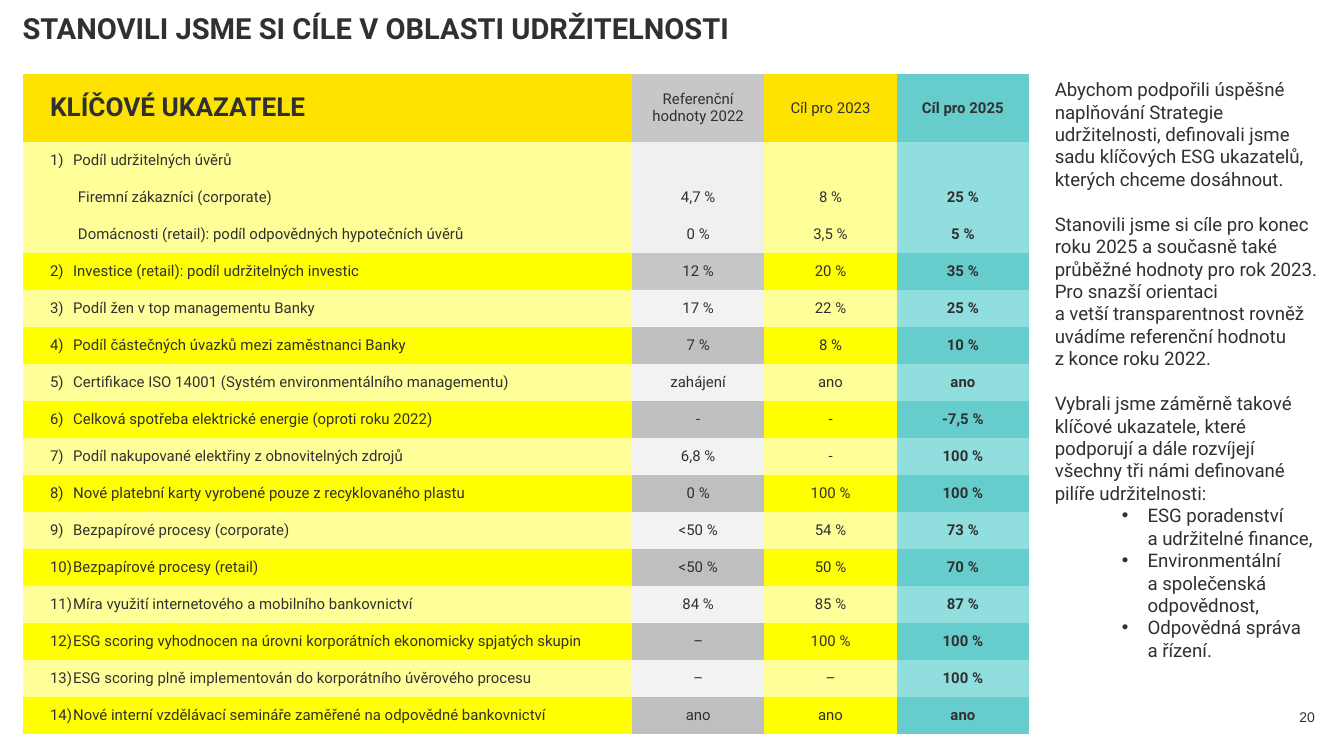
from dataclasses import dataclass

import pptx
import pptx.dml.color
import pptx.enum.text
import pptx.oxml.ns
import pptx.oxml.xmlchemy
import pptx.util
from lxml import etree

Pt = pptx.util.Pt
ALIGN = pptx.enum.text.PP_ALIGN
MIDDLE = pptx.enum.text.MSO_ANCHOR.MIDDLE
qn = pptx.oxml.ns.qn

INK = "303030"
NO_GRID = "{2D5ABB26-0587-4C30-8999-92F81FD0307C}"
HEAD_H, ROW_H = 36.4, 19.83
COLS = (326.25, 70.9, 70.9, 70.9)
TAB, INSET = 12.4, 14.4


@dataclass
class Goal:
    label: str
    base: str
    mid: str
    end: str
    fills: tuple
    indent: float = 0


@dataclass
class Para:
    text: str
    gap: float = 0
    bullet: bool = False


# Row colours: label, base value, middle goal, final goal
HEAD = ("FFE300", "C7C7C7", "FFE300", "66CCCC")
FIRST = ("FFFF99", "F0F0F0", "FFFF99", "91DEDE")
SECOND = ("FFFF00", "C7C7C7", "FFFF00", "66CCCC")
LIGHT = ("FFFF99", "F2F2F2", "FFFF99", "91DEDE")
DARK = ("FFFF00", "BFBFBF", "FFFF00", "66CCCC")

GOALS = [
    Goal("1)\tPodíl udržitelných úvěrů", "", "", "", FIRST),
    Goal("Firemní zákazníci (corporate)", "4,7 %", "8 %", "25 %", FIRST, 15),
    Goal("Domácnosti (retail): podíl odpovědných hypotečních úvěrů",
         "0 %", "3,5 %", "5 %", FIRST, 15),
    Goal("2)\tInvestice (retail): podíl udržitelných investic",
         "12 %", "20 %", "35 %", SECOND),
]
REST = [
    ("Podíl žen v top managementu Banky", "17 %", "22 %", "25 %"),
    ("Podíl částečných úvazků mezi zaměstnanci Banky", "7 %", "8 %", "10 %"),
    ("Certifikace ISO 14001 (Systém environmentálního managementu)",
     "zahájení", "ano", "ano"),
    ("Celková spotřeba elektrické energie (oproti roku 2022)", "-", "-", "-7,5 %"),
    ("Podíl nakupované elektřiny z obnovitelných zdrojů", "6,8 %", "-", "100 %"),
    ("Nové platební karty vyrobené pouze z recyklovaného plastu",
     "0 %", "100 %", "100 %"),
    ("Bezpapírové procesy (corporate)", "<50 %", "54 %", "73 %"),
    ("Bezpapírové procesy (retail)", "<50 %", "50 %", "70 %"),
    ("Míra využití internetového a mobilního bankovnictví", "84 %", "85 %", "87 %"),
    ("ESG scoring vyhodnocen na úrovni korporátních ekonomicky spjatých skupin",
     "–", "100 %", "100 %"),
    ("ESG scoring plně implementován do korporátního úvěrového procesu",
     "–", "–", "100 %"),
    ("Nové interní vzdělávací semináře zaměřené na odpovědné bankovnictví",
     "ano", "ano", "ano"),
]
for num, (label, *vals) in enumerate(REST, 3):
    GOALS.append(Goal(f"{num})\t{label}", *vals, LIGHT if num % 2 else DARK))

NOTES = [
    Para("Abychom podpořili úspěšné naplňování Strategie udržitelnosti, definovali "
         "jsme sadu klíčových ESG ukazatelů, kterých chceme dosáhnout."),
    Para("Stanovili jsme si cíle pro konec roku 2025 a současně také průběžné hodnoty "
         "pro rok 2023. Pro snazší orientaci \va vetší transparentnost rovněž uvádíme "
         "referenční hodnotu \vz konce roku 2022.", 12),
    Para("Vybrali jsme záměrně takové klíčové ukazatele, které podporují a dále "
         "rozvíjejí všechny tři námi definované pilíře udržitelnosti:", 12),
    Para("ESG poradenství \va udržitelné finance,", bullet=True),
    Para("Environmentální \va společenská odpovědnost,", bullet=True),
    Para("Odpovědná správa \va řízení.", bullet=True),
]


def color(code: str) -> pptx.dml.color.RGBColor:
    return pptx.dml.color.RGBColor.from_string(code)


def style(para, size: float, bold: bool = False, face: str = "Roboto") -> None:
    form = {"size": Pt(size), "bold": bold, "name": face}
    for run in para.runs:
        for key, val in form.items():
            setattr(run.font, key, val)
        run.font.color.rgb = color(INK)
    if not para.runs:
        # An empty cell must not stretch its row
        end = etree.SubElement(para._p, qn("a:endParaRPr"))
        end.set("sz", str(int(size * 100)))


def add_tab(para) -> None:
    stops = etree.SubElement(para._p.get_or_add_pPr(), qn("a:tabLst"))
    stop = etree.SubElement(stops, qn("a:tab"))
    stop.set("pos", str(int(Pt(TAB))))
    stop.set("algn", "l")


def add_dot(para) -> None:
    props = para._p.get_or_add_pPr()
    props.set("marL", str(int(Pt(49.7))))
    props.set("indent", str(int(Pt(-13.7))))
    etree.SubElement(props, qn("a:buFont")).set("typeface", "Arial")
    etree.SubElement(props, qn("a:buChar")).set("char", "•")


def add_text(slide, box: tuple, paras: list, size: float,
             bold: bool = False, face: str = "Roboto") -> None:
    frame = slide.shapes.add_textbox(*map(Pt, box)).text_frame
    frame.word_wrap = True
    for i, item in enumerate(paras):
        para = frame.add_paragraph() if i else frame.paragraphs[0]
        para.text = item.text
        if item.bullet:
            add_dot(para)
        if item.gap:
            para.space_before = Pt(item.gap)
        style(para, size, bold, face)


def fill_cell(cell, text: str, fill: str, col: int, size: float,
              bold: bool, indent: float = 0) -> None:
    cell.fill.solid()
    cell.fill.fore_color.rgb = color(fill)
    cell.vertical_anchor = MIDDLE
    cell.text = text
    if col == 0:
        cell.margin_left = Pt(INSET)
    for para in cell.text_frame.paragraphs:
        if col:
            para.alignment = ALIGN.CENTER
        elif indent:
            para._p.get_or_add_pPr().set("marL", str(int(Pt(indent))))
        elif "\t" in text:
            add_tab(para)
        style(para, size, bold)


def add_goals(slide) -> None:
    high = HEAD_H + ROW_H * len(GOALS)
    table = slide.shapes.add_table(
        len(GOALS) + 1, len(COLS), Pt(12.4), Pt(39.6), Pt(sum(COLS)), Pt(high)).table
    table.first_row = table.horz_banding = False
    table._tbl.tblPr.find(qn("a:tableStyleId")).text = NO_GRID
    for col, wide in zip(table.columns, COLS):
        col.width = Pt(wide)
    for i, row in enumerate(table.rows):
        row.height = Pt(ROW_H if i else HEAD_H)

    # Header row
    heads = ("KLÍČOVÉ UKAZATELE", "Referenční\nhodnoty 2022",
             "Cíl pro 2023", "Cíl pro 2025")
    for j, (text, fill) in enumerate(zip(heads, HEAD)):
        fill_cell(table.cell(0, j), text, fill, j, 8 if j else 14, j in (0, 3))

    # Goal rows
    for i, goal in enumerate(GOALS, 1):
        texts = (goal.label, goal.base, goal.mid, goal.end)
        for j, (text, fill) in enumerate(zip(texts, goal.fills)):
            fill_cell(table.cell(i, j), text, fill, j, 8, j == 3, goal.indent)


def main() -> None:
    deck = pptx.Presentation()
    deck.slide_width, deck.slide_height = Pt(720), Pt(405)
    slide = deck.slides.add_slide(deck.slide_layouts[6])

    # Title, side notes, table and page number
    title = [Para("STANOVILI JSME SI CÍLE V OBLASTI UDRŽITELNOSTI")]
    add_text(slide, (5, 2.2, 683, 84), title, 15.6, True)
    add_text(slide, (558, 38.2, 156.3, 322.5), NOTES, 10)
    add_goals(slide)
    add_text(slide, (689, 375.8, 34.5, 21.6), [Para("20")], 7.5, face="Arial")
    deck.save("out.pptx")


if __name__ == "__main__":
    main()
